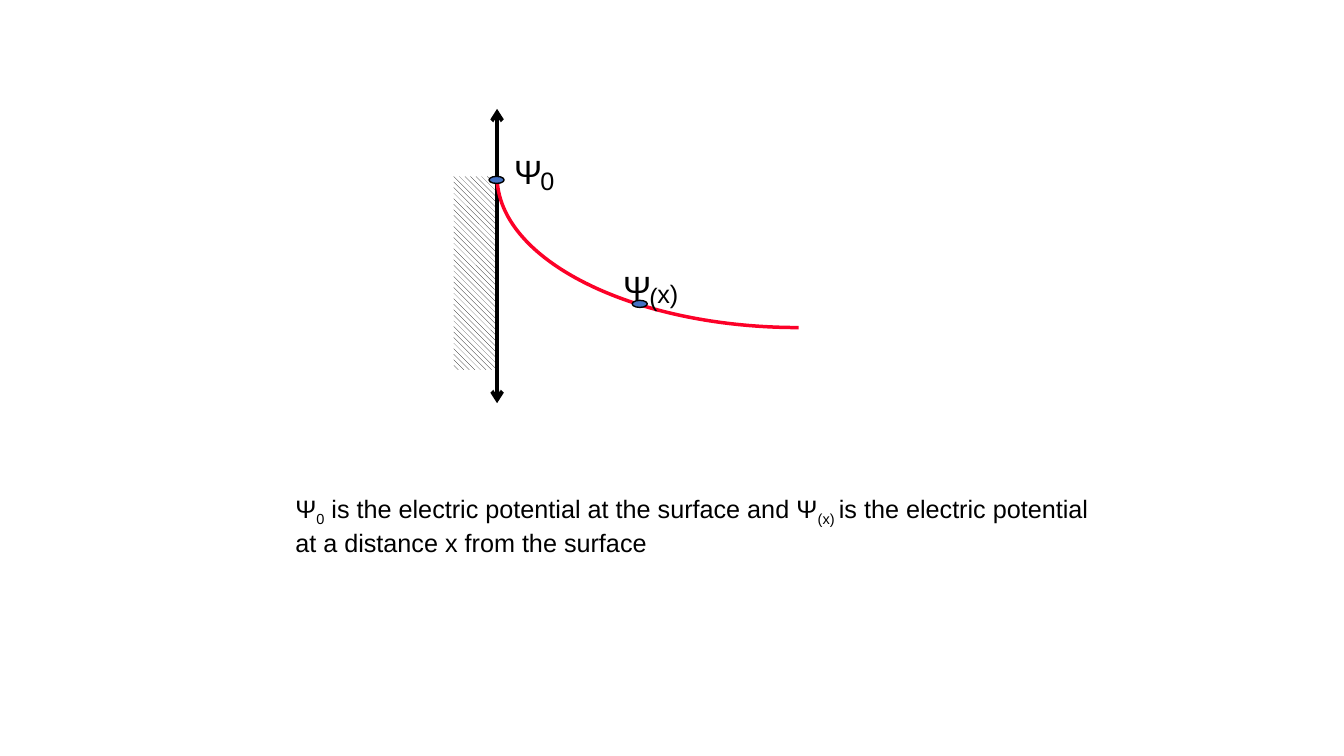
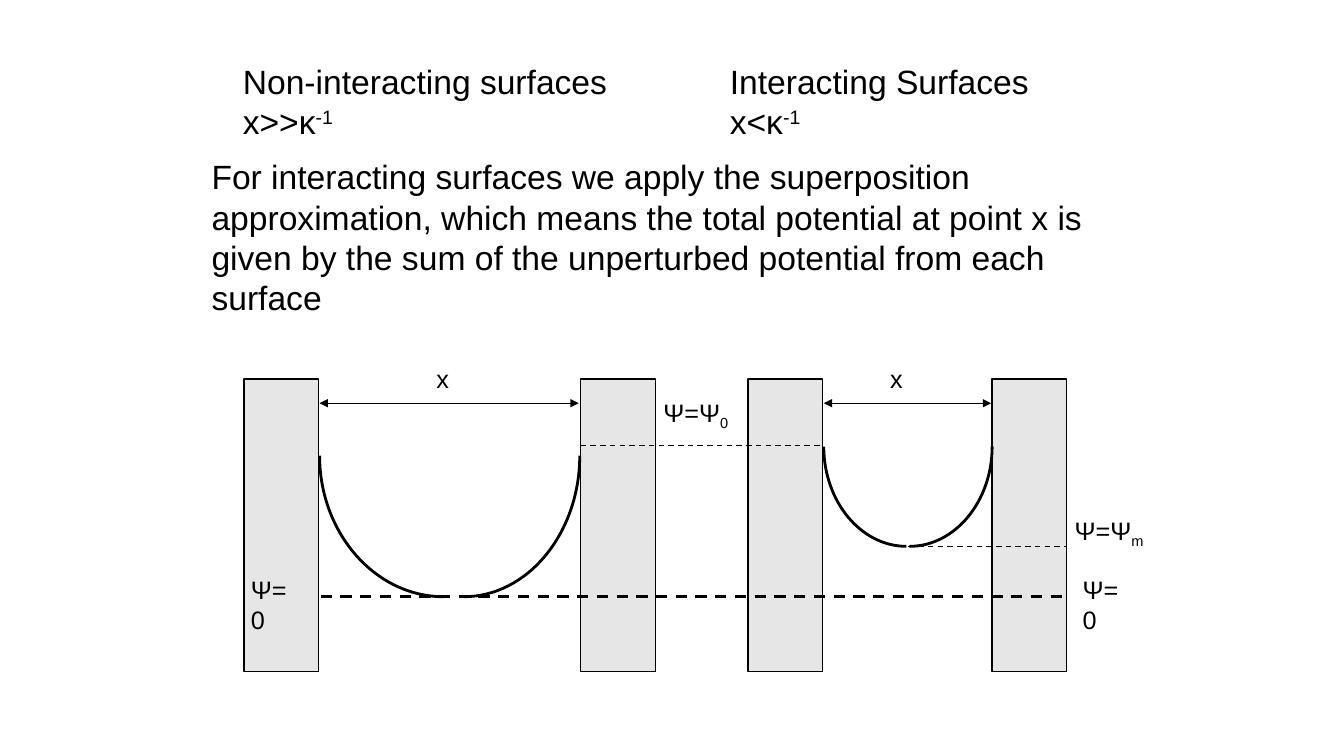
from lxml import etree
from pptx import Presentation
from pptx.dml.color import RGBColor
from pptx.enum.dml import MSO_LINE, MSO_PATTERN
from pptx.enum.shapes import MSO_CONNECTOR, MSO_SHAPE
from pptx.enum.text import MSO_AUTO_SIZE
from pptx.oxml.ns import qn
from pptx.util import Inches, Pt

RECTANGLE, OVAL = MSO_SHAPE.RECTANGLE, MSO_SHAPE.OVAL
STRAIGHT = MSO_CONNECTOR.STRAIGHT
DASH = MSO_LINE.DASH
HATCH = MSO_PATTERN.WIDE_DOWNWARD_DIAGONAL
GROW = MSO_AUTO_SIZE.SHAPE_TO_FIT_TEXT

BLACK, WHITE, RED, BLUE, GREY = "000000", "FFFFFF", "FC0128", "4472C4", "E7E6E6"
FONT = "Arial"
SUB, SUPER = -25, 30
QUARTER = 0.55  # Bezier handle length of a quarter ellipse
PADDED, TIGHT = (0.1, 0.05), (0, 0)


def rgb(hex_code):
    return RGBColor.from_string(hex_code)


# Slide 1: potential falling with distance from one surface
AXIS_X, SURFACE_TOP = 4.93, 1.75
single_surface = {
    # left, top, width, height, hatched
    "slabs": [(4.5, SURFACE_TOP, 0.42, 1.92, True)],
    # x1, y1, x2, y2, points, dash, arrowhead
    "lines": [(AXIS_X, 1.08, AXIS_X, 4, 2.75, None, "arrow")],
    # wall x, wall y, lowest x, lowest y, colour, points
    "curves": [(AXIS_X, SURFACE_TOP, 7.92, 3.25, RED, 2.5)],
    # left, top, width, height, size, padding, wrap, paragraphs of (text, baseline)
    "texts": [
        (5.1, 1.5, 0.27, 0.4, 24, TIGHT, False, [[("Ψ", 0)]]),
        (5.36, 1.64, 0.12, 0.3, 18, TIGHT, False, [[("0", 0)]]),
        (6.18, 2.65, 0.27, 0.4, 24, TIGHT, False, [[("Ψ", 0)]]),
        (6.44, 2.79, 0.08, 0.3, 18, TIGHT, False, [[("(", 0)]]),
        (6.52, 2.76, 0.21, 0.3, 18, TIGHT, False, [[("x)", 0)]]),
        (2.83, 4.84, 8.08, 0.7, 18, PADDED, True, [[
            ("Ψ", 0), ("0", SUB),
            (" is the electric potential at the surface and Ψ", 0), ("(x) ", SUB),
            ("is the electric potential at a distance x from the surface", 0)]]),
    ],
    # left, top
    "dots": [(6.27, 2.98), (4.85, SURFACE_TOP)],
}

# Slide 2: two pairs of surfaces, far apart and close together
SLAB_WIDTH = 0.74
FAR_LEFT, FAR_RIGHT, NEAR_LEFT, NEAR_RIGHT = 2.42, 5.76, 7.42, 9.84
FAR_WALL, NEAR_WALL = 3.17, 8.17
OUTER_EDGE = NEAR_RIGHT + SLAB_WIDTH
GAP_Y, SURFACE_Y, MIDDLE_Y, ZERO_Y = 4, 4.42, 5.42, 5.92
surface_pairs = {
    "slabs": [(left, 3.76, SLAB_WIDTH, 2.9, False)
              for left in (NEAR_RIGHT, NEAR_LEFT, FAR_LEFT, FAR_RIGHT)],
    "lines": [
        (3.18, ZERO_Y, 10.57, ZERO_Y, 2, DASH, None),
        (9.01, MIDDLE_Y, OUTER_EDGE, MIDDLE_Y, 1, DASH, None),
        (FAR_RIGHT, SURFACE_Y, 8.16, SURFACE_Y, 1, DASH, None),
        (FAR_WALL, GAP_Y, 5.74, GAP_Y, 1, None, "triangle"),
        (NEAR_WALL, GAP_Y, 9.83, GAP_Y, 1, None, "triangle"),
    ],
    "curves": [
        (FAR_WALL, 4.52, 4.4, ZERO_Y, BLACK, 2),
        (5.75, 4.52, 4.6, ZERO_Y, BLACK, 2),
        (NEAR_WALL, 4.43, 8.99, MIDDLE_Y, BLACK, 2),
        (NEAR_RIGHT, 4.43, 9.02, MIDDLE_Y, BLACK, 2),
    ],
    "texts": [
        (6.48, 3.89, 0.88, 0.4, 18, PADDED, False, [[("Ψ=Ψ", 0), ("0", SUB)]]),
        (10.56, 5.06, 0.92, 0.4, 18, PADDED, False, [[("Ψ=Ψ", 0), ("m", SUB)]]),
        (2.39, 5.65, 0.67, 0.7, 18, PADDED, True, [[("Ψ=0", 0)]]),
        (10.64, 5.65, 0.67, 0.7, 18, PADDED, True, [[("Ψ=0", 0)]]),
        (4.23, 3.56, 0.33, 0.4, 18, PADDED, False, [[("x", 0)]]),
        (8.73, 3.56, 0.33, 0.4, 18, PADDED, False, [[("x", 0)]]),
        (2.31, 0.55, 3.85, 0.91, 24, PADDED, False,
         [[("Non-interacting surfaces", 0)], [("x>>κ", 0), ("-1", SUPER)]]),
        (7.14, 0.55, 3.19, 0.91, 24, PADDED, False,
         [[("Interacting Surfaces", 0)], [("x<κ", 0), ("-1", SUPER)]]),
        (2, 1.5, 9.5, 1.71, 24, PADDED, True, [[
            ("For interacting surfaces we apply the superposition approximation, "
             "which means the total potential at point x is given by the sum of "
             "the unperturbed potential from each surface", 0)]]),
    ],
    "dots": [],
}

deck = Presentation()
deck.slide_width, deck.slide_height = Inches(13.33), Inches(7.5)
blank_layout = deck.slide_layouts[6]

for content in (single_surface, surface_pairs):
    page = deck.slides.add_slide(blank_layout)

    # Slabs
    for left, top, width, height, hatched in content["slabs"]:
        slab = page.shapes.add_shape(
            RECTANGLE, Inches(left), Inches(top), Inches(width), Inches(height))
        slab.shadow.inherit = False
        if hatched:
            slab.fill.patterned()
            slab.fill.pattern = HATCH
            slab.fill.fore_color.rgb = rgb(BLACK)
            slab.fill.back_color.rgb = rgb(WHITE)
            slab.line.fill.background()
        else:
            slab.fill.solid()
            slab.fill.fore_color.rgb = rgb(GREY)
            slab.line.color.rgb = rgb(BLACK)
            slab.line.width = Pt(1)

    # Axes, levels and distances
    for x1, y1, x2, y2, points, dash, arrowhead in content["lines"]:
        connector = page.shapes.add_connector(
            STRAIGHT, Inches(x1), Inches(y1), Inches(x2), Inches(y2))
        connector.line.color.rgb = rgb(BLACK)
        connector.line.width = Pt(points)
        if dash:
            connector.line.dash_style = dash
        if arrowhead:
            outline = connector.line._get_or_add_ln()
            for end in ("a:headEnd", "a:tailEnd"):
                etree.SubElement(outline, qn(end), type=arrowhead)
        etree.SubElement(connector._element.spPr, qn("a:effectLst"))

    # Potential curves: quarter ellipses from the wall to the lowest point
    for wall_x, wall_y, low_x, low_y, color, points in content["curves"]:
        handle_x = low_x + (wall_x - low_x) * QUARTER
        handle_y = wall_y + (low_y - wall_y) * QUARTER
        builder = page.shapes.build_freeform(Inches(wall_x), Inches(wall_y))
        builder.add_line_segments(
            [(Inches(x), Inches(y)) for x, y in
             ((wall_x, handle_y), (handle_x, low_y), (low_x, low_y))], close=False)
        curve = builder.convert_to_shape()
        # Join the three segments into one Bezier curve
        segments = list(curve._element.iter(qn("a:lnTo")))
        outline = segments[0].getparent()
        bezier = etree.SubElement(outline, qn("a:cubicBezTo"))
        for segment in segments:
            bezier.append(segment[0])
            outline.remove(segment)
        curve.shadow.inherit = False
        curve.fill.background()
        curve.line.color.rgb = rgb(color)
        curve.line.width = Pt(points)

    # Labels and statements
    for left, top, width, height, size, padding, wrap, paragraphs in content["texts"]:
        box = page.shapes.add_textbox(
            Inches(left), Inches(top), Inches(width), Inches(height))
        frame = box.text_frame
        frame.word_wrap = wrap
        frame.auto_size = GROW
        frame.margin_left = frame.margin_right = Inches(padding[0])
        frame.margin_top = frame.margin_bottom = Inches(padding[1])
        for index, runs in enumerate(paragraphs):
            para = frame.add_paragraph() if index else frame.paragraphs[0]
            for text, baseline in runs:
                span = para.add_run()
                span.text = text
                span.font.name = FONT
                span.font.size = Pt(size)
                span.font.color.rgb = rgb(BLACK)
                if baseline:
                    span._r.get_or_add_rPr().set("baseline", str(baseline * 1000))

    # Marked points
    for left, top in content["dots"]:
        dot = page.shapes.add_shape(
            OVAL, Inches(left), Inches(top), Inches(0.15), Inches(0.07))
        dot.shadow.inherit = False
        dot.fill.solid()
        dot.fill.fore_color.rgb = rgb(BLUE)
        dot.line.color.rgb = rgb(BLACK)
        dot.line.width = Pt(1)

deck.save("out.pptx")
